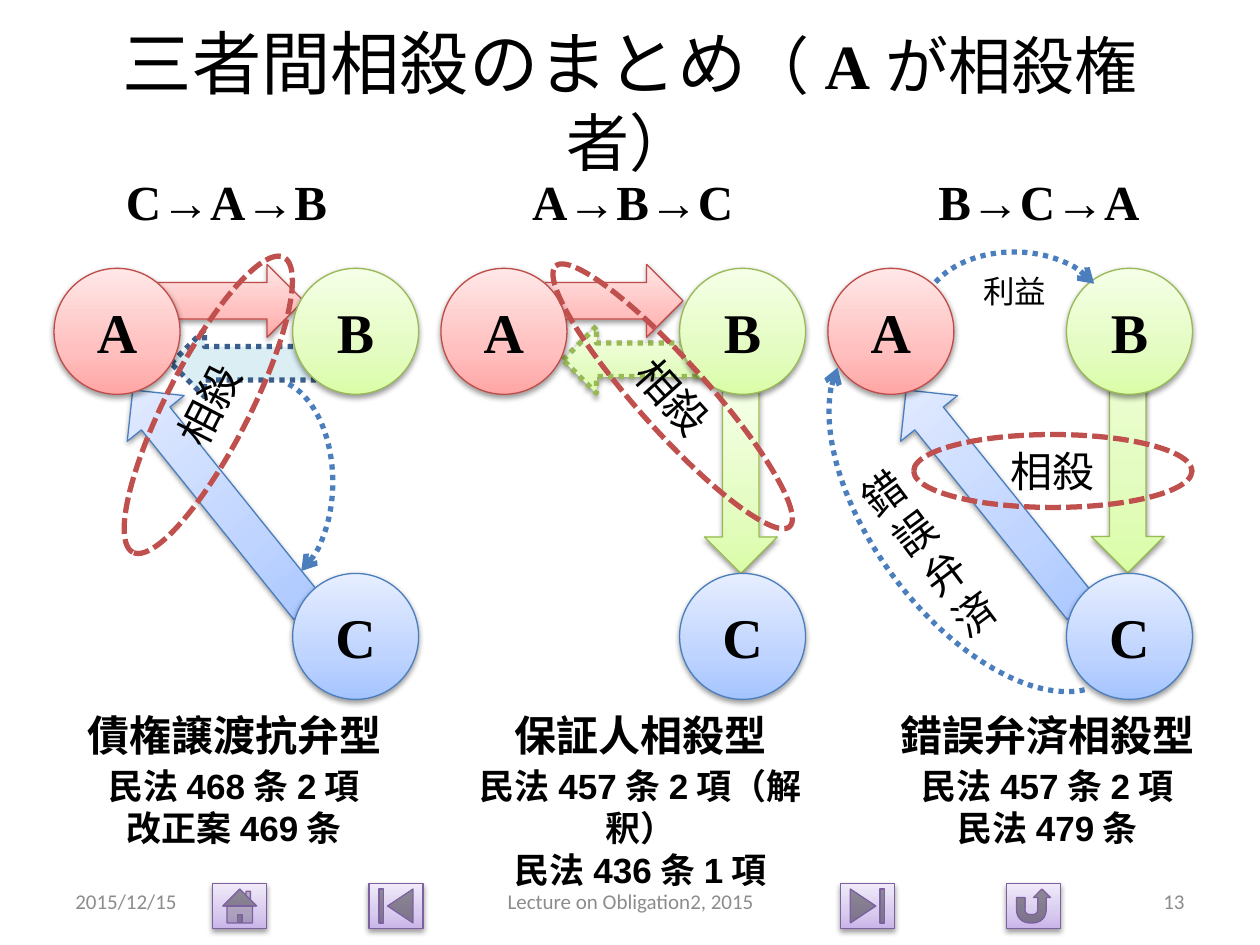
from copy import deepcopy
from lxml.etree import SubElement
from pptx import Presentation
from pptx.dml.color import RGBColor
from pptx.enum.dml import MSO_LINE as Dash
from pptx.enum.shapes import MSO_SHAPE as Preset
from pptx.enum.text import MSO_ANCHOR as Anchor, MSO_AUTO_SIZE as AutoSize, PP_ALIGN as Align
from pptx.oxml.ns import qn
from pptx.util import Cm, Pt

COLORS = {"black": "000000", "footer": "8C8C8C", "pale": "DBEEF4",
          "navy": "3A5F8C", "blue": "4B7EBC", "oval": "C0504D"}
# Line colour, then gradient stops from bottom to top
THEMES = {
    "red": ("BF4C48", "FFA6A5", "FFC0BF", "FFE7E7"),
    "green": ("98B955", "DAFDA7", "E4FCC2", "F5FFE7"),
    "blue": ("4B7EBC", "A4C4FF", "BFD4FF", "E6EEFF"),
    "purple": ("7D60A0", "C9B5E8", "D8CBEE", "F0EAF9"),
}
SERIF, SANS, BODY, CJK = "Times New Roman", "Arial", "Calibri", "Noto Sans CJK JP"

presentation = Presentation()
presentation.slide_width, presentation.slide_height = Cm(25.4), Cm(19.05)
slide = presentation.slides.add_slide(presentation.slide_layouts[6])
shapes = slide.shapes


def add_preset(kind, box, theme=None, line="black", width=0.75, dash=None, rotation=0):
    """Add a preset shape; a theme gives it a gradient, a line colour and a shadow."""
    shape = shapes.add_shape(kind, *[Cm(value) for value in box])
    shape.rotation = rotation
    shape.shadow.inherit = False
    shape.fill.background()
    if theme:
        line_hex, *stop_colors = THEMES[theme]
        shape.fill.gradient()
        shape.fill.gradient_angle = 90
        stop_list = shape._element.spPr.find(".//" + qn("a:gsLst"))
        stop_list.insert(1, deepcopy(stop_list[0]))
        for stop, position, color in zip(shape.fill.gradient_stops, (0, 0.35, 1), stop_colors):
            stop.position = position
            stop.color.rgb = RGBColor.from_string(color)
        effects = shape._element.spPr.find(qn("a:effectLst"))
        shadow = SubElement(effects, qn("a:outerShdw"), blurRad="40000", dist="20000",
                            dir="5400000", rotWithShape="0")
        shadow_color = SubElement(shadow, qn("a:srgbClr"), val=COLORS["black"])
        SubElement(shadow_color, qn("a:alpha"), val="38000")
    else:
        line_hex = COLORS[line]
    shape.line.color.rgb = RGBColor.from_string(line_hex)
    shape.line.width = Pt(width)
    if dash:
        shape.line.dash_style = dash
    return shape


def write(target, lines, size, font, bold=False, color="black", align=Align.CENTER,
          anchor=Anchor.MIDDLE, grow=False):
    """Write paragraphs into a shape, or into a new text box when given its box."""
    if isinstance(target, tuple):
        target = shapes.add_textbox(*[Cm(value) for value in target])
    frame = target.text_frame
    frame.word_wrap = True
    frame.vertical_anchor = anchor
    if grow:
        frame.auto_size = AutoSize.SHAPE_TO_FIT_TEXT
    for index, text in enumerate(lines):
        paragraph = frame.add_paragraph() if index else frame.paragraphs[0]
        paragraph.text = text
        paragraph.alignment = align
        paragraph.font.size = Pt(size)
        paragraph.font.bold = bold
        paragraph.font.name = font
        paragraph.font.color.rgb = RGBColor.from_string(COLORS[color])
        SubElement(paragraph._p.pPr.find(qn("a:defRPr")), qn("a:ea"), typeface=CJK)
    return frame


# Navigation buttons
for kind, left in ((Preset.ACTION_BUTTON_HOME, 4.29), (Preset.ACTION_BUTTON_BEGINNING, 7.44),
                   (Preset.ACTION_BUTTON_END, 16.94), (Preset.ACTION_BUTTON_RETURN, 20.29)):
    add_preset(kind, (left, 17.81, 1.09, 0.91), "purple")

# Block arrows between the parties
add_preset(Preset.LEFT_ARROW, (11.35, 6.58, 4.42, 1.35), "green", width=3, dash=Dash.ROUND_DOT)
transferred = add_preset(Preset.LEFT_ARROW, (3.45, 6.65, 4.42, 1.35),
                         line="navy", width=3, dash=Dash.ROUND_DOT)
transferred.fill.solid()
transferred.fill.fore_color.rgb = RGBColor.from_string(COLORS["pale"])
for kind, box, theme, rotation in (
        (Preset.RIGHT_ARROW, (3.07, 5.33, 3.05, 1.47), "red", 0),
        (Preset.UP_ARROW, (3.71, 7.24, 1.47, 5.64), "blue", 321.2),
        (Preset.DOWN_ARROW, (14.2, 7.85, 1.47, 3.71), "green", 0),
        (Preset.UP_ARROW, (19.3, 7.24, 1.47, 5.64), "blue", 321.2),
        (Preset.DOWN_ARROW, (22, 5.56, 1.47, 5.99), "green", 0),
        (Preset.RIGHT_ARROW, (10.82, 5.33, 2.95, 1.47), "red", 0)):
    add_preset(kind, box, theme, rotation=rotation)

# Title with mixed fonts
title = write((1.27, 0.76, 22.86, 2.49), [""], 36, BODY).paragraphs[0]
for text, size, font, bold in (("三者間相殺のまとめ", 39.6, BODY, False), ("（", 36, BODY, False),
                               ("A", 36, SERIF, True), ("が相殺権者）", 36, BODY, False)):
    run = title.add_run()
    run.text = text
    run.font.size, run.font.name, run.font.bold = Pt(size), font, bold

# Footer
for left, width, text, align in ((1.27, 5.92, "2015/12/15", Align.LEFT),
                                 (8.69, 8.05, "Lecture on Obligation2, 2015", Align.CENTER),
                                 (18.21, 5.92, "13", Align.RIGHT)):
    write((left, 17.65, width, 1.02), [text], 12, BODY, color="footer", align=align)

# Three columns: parties, flow, type name and articles
columns = (
    ("C→A→B", "債権譲渡抗弁型", ("民法468条2項", "改正案469条")),
    ("A→B→C", "保証人相殺型", ("民法457条2項（解釈）", "民法436条1項")),
    ("B→C→A", "錯誤弁済相殺型", ("民法457条2項", "民法479条")),
)
for index, (flow, type_name, articles) in enumerate(columns):
    party_left = 1.09 + 7.8 * index
    for letter, dx, top, theme in (("A", 0, 5.41, "red"), ("B", 4.81, 5.41, "green"),
                                   ("C", 4.81, 11.56, "blue")):
        circle = add_preset(Preset.OVAL, (party_left + dx, top, 2.54, 2.54), theme)
        write(circle, [letter], 32, SERIF, bold=True)
    text_left = 1.19 + 8.2 * index
    write((1.35 + 8.19 * index, 3.33, 6.43, 1.45), [flow], 28, SERIF, bold=True, grow=True)
    write((text_left, 14.17, 7.06, 1.27), [type_name], 24, SANS, bold=True,
          anchor=Anchor.TOP, grow=True)
    write((text_left, 15.29, 7.06, 1.96), articles, 20, SANS, bold=True,
          anchor=Anchor.TOP, grow=True)

# Dotted arcs with arrowheads
arcs = []
for box, angles, rotation in (((4.17, 7.65, 2.54, 4.14), (168.53, 42.28), 0),
                              ((18.59, 5.08, 3.71, 2.54), (121.57, 203.22), 0),
                              ((17.58, 6.07, 4.47, 8.46), (58.28, 156.86), 323.2)):
    arc = add_preset(Preset.ARC, box, line="blue", width=3, dash=Dash.ROUND_DOT, rotation=rotation)
    arc.adjustments[0], arc.adjustments[1] = angles
    SubElement(arc.line._get_or_add_ln(), qn("a:tailEnd"), type="arrow")
    arcs.append(arc)
write(arcs[1], ["利益"], 18, CJK).margin_top = Cm(1.05)
write(arcs[2], ["錯\v誤\v弁\v済"], 24, CJK)

# Dashed set-off ovals
for box, rotation in (((0.86, 7.32, 6.68, 1.68), 297.1), ((10.03, 7.29, 7.06, 1.4), 48.1),
                      ((18.42, 8.76, 5.61, 1.47), 0)):
    oval = add_preset(Preset.OVAL, box, line="oval", width=3, dash=Dash.SQUARE_DOT,
                      rotation=rotation)
    write(oval, ["相殺"], 24, CJK)

presentation.save("out.pptx")
